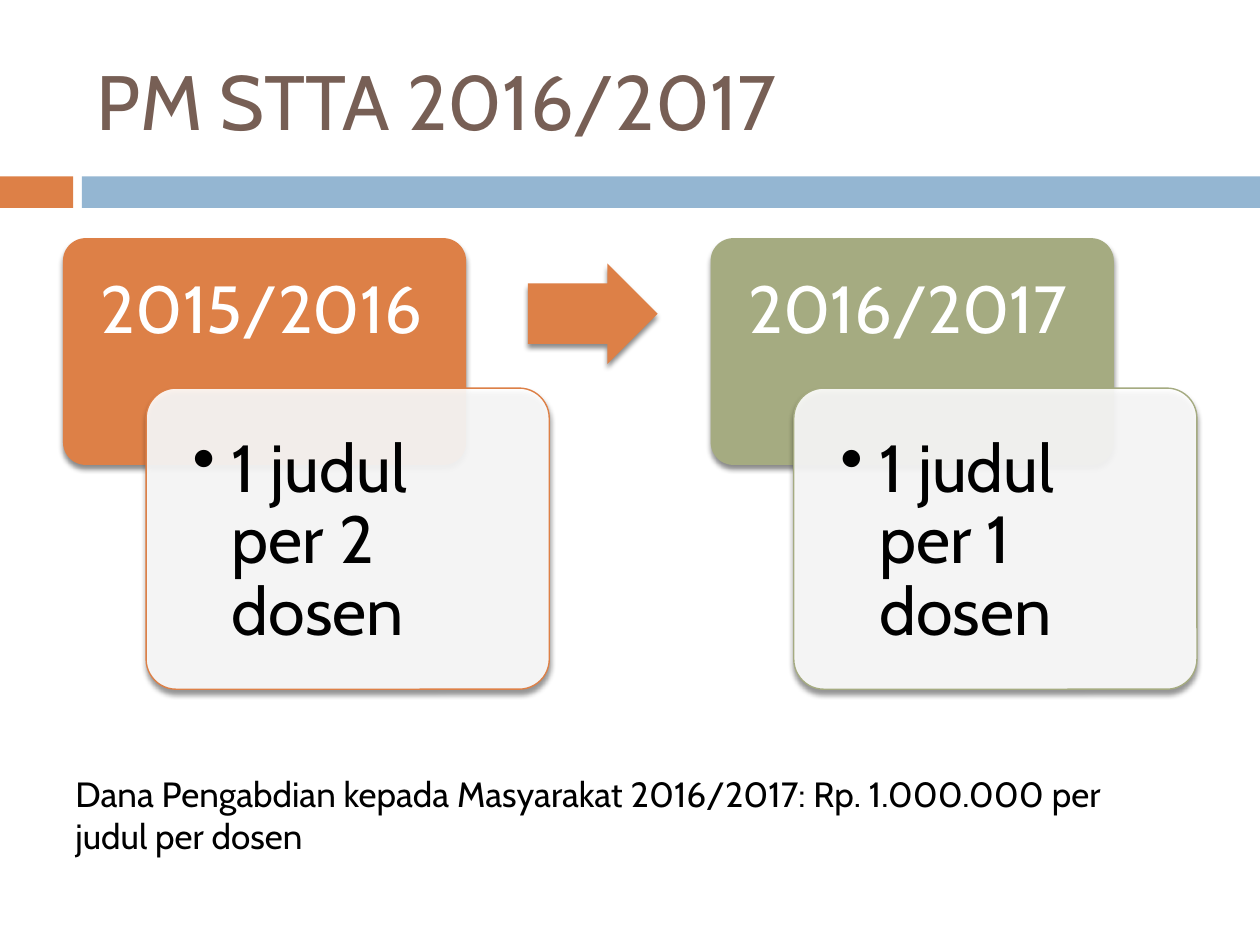
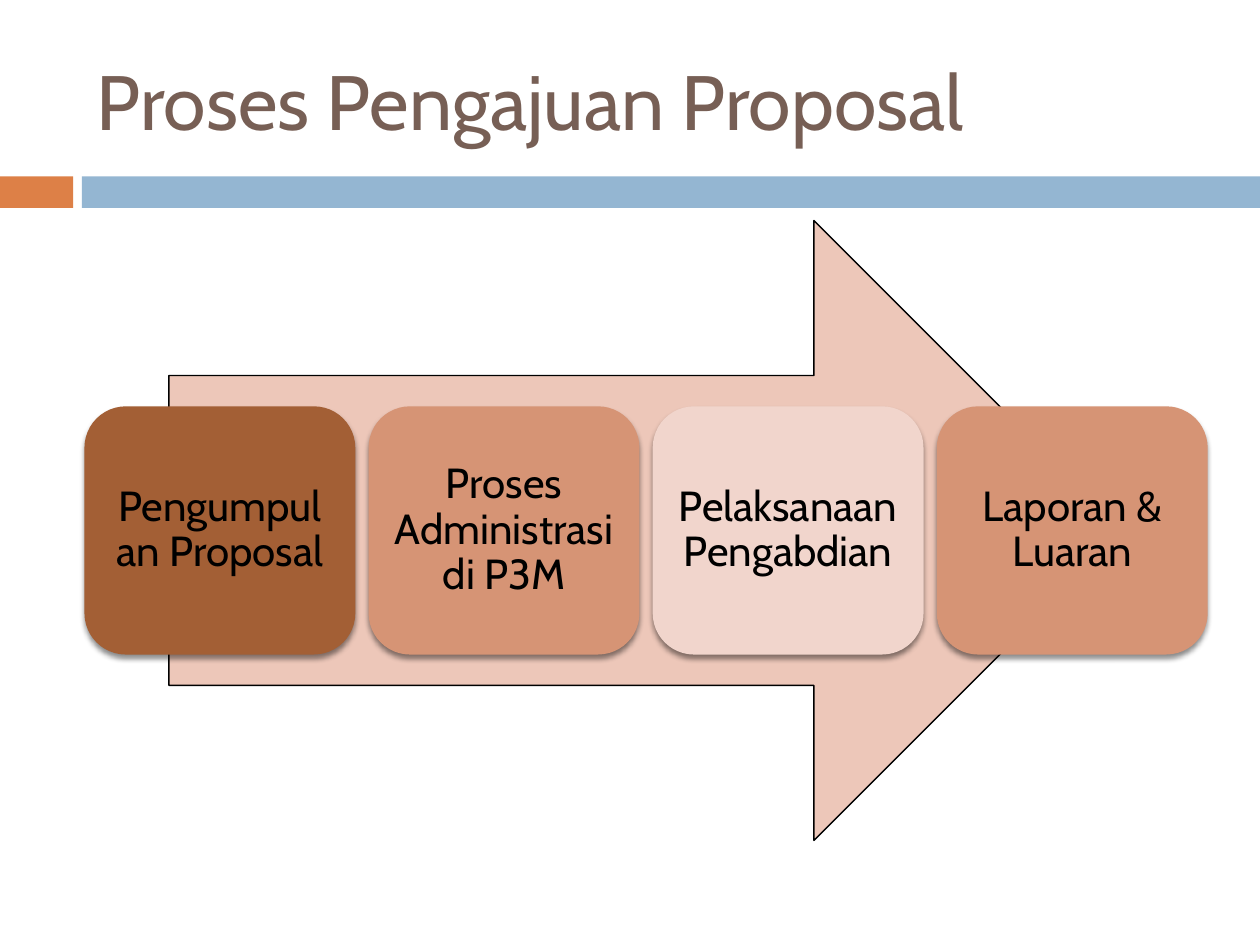
from dataclasses import dataclass

from lxml.etree import SubElement
from pptx import Presentation
from pptx.dml.color import RGBColor
from pptx.enum.shapes import MSO_SHAPE as Preset
from pptx.enum.text import MSO_ANCHOR as Anchor, PP_ALIGN as Align
from pptx.oxml.ns import qn
from pptx.util import Inches, Pt


@dataclass(frozen=True)
class Theme:
    """Colours, font and type sizes of the deck."""

    font: str = "Cabin"
    title: str = "775F55"
    orange: str = "DD8047"
    blue: str = "94B6D2"
    green: str = "A5AB81"
    white: str = "FFFFFF"
    black: str = "000000"
    flow: str = "EDC7B9"
    steps: tuple = ("A35F35", "D69475", "F1D5CC", "D69475")
    title_size: int = 44
    card_size: int = 38
    step_size: int = 24
    note_size: int = 20
    outline: float = 0.79


class SlideBuilder:
    """Draws styled elements on a grid of 100 columns by 75 rows."""

    columns, rows = 100, 75

    def __init__(self, deck, theme):
        """Keep the deck and its theme."""
        self.deck, self.theme, self.page = deck, theme, None

    def place(self, left, top, width, height):
        """Turn grid units into slide lengths."""
        column = self.deck.slide_width / self.columns
        row = self.deck.slide_height / self.rows
        return int(left * column), int(top * row), int(width * column), int(height * row)

    def start(self, title):
        """Add a page with its bands and title."""
        self.page = self.deck.slides.add_slide(self.deck.slide_layouts[6])
        for left, width, colour in ((0, 5.8, self.theme.orange), (6.5, 93.5, self.theme.blue)):
            self.shape(Preset.RECTANGLE, (left, 14, width, 2.5), colour)
        self.text((6.7, 2.5, 89.2, 10.8), title, self.theme.title_size, self.theme.title,
                  anchor=Anchor.MIDDLE)

    def shape(self, preset, area, fill, line=None, adjust=(), shadow=False, opacity=None):
        """Add a filled preset shape."""
        shape = self.page.shapes.add_shape(preset, *self.place(*area))
        for index, value in enumerate(adjust):
            shape.adjustments[index] = value
        shape.fill.solid()
        shape.fill.fore_color.rgb = RGBColor.from_string(fill)
        if opacity:
            colour = shape.fill._xPr.find(qn("a:solidFill"))[0]
            SubElement(colour, qn("a:alpha"), val=str(opacity * 1000))
        if line:
            shape.line.color.rgb = RGBColor.from_string(line)
            shape.line.width = Pt(self.theme.outline)
        else:
            shape.line.fill.background()
        shape.shadow.inherit = False
        if shadow:
            self.cast_shadow(shape)

    def cast_shadow(self, shape):
        """Give a shape the soft shadow below it."""
        effects = shape._element.spPr.find(qn("a:effectLst"))
        outer = SubElement(effects, qn("a:outerShdw"), blurRad=str(Pt(3)), dist=str(Pt(2.4)),
                           dir="5400000", rotWithShape="0")
        colour = SubElement(outer, qn("a:srgbClr"), val=self.theme.black)
        SubElement(colour, qn("a:alpha"), val="45000")

    def text(self, area, words, size, colour, insets=(0.1, 0.05, 0.1, 0.05),
             anchor=Anchor.TOP, align=Align.LEFT, spacing=1.0, bullet=False):
        """Add a wrapped text box."""
        frame = self.page.shapes.add_textbox(*self.place(*area)).text_frame
        frame.word_wrap = True
        frame.vertical_anchor = anchor
        (frame.margin_left, frame.margin_top,
         frame.margin_right, frame.margin_bottom) = map(Inches, insets)
        para = frame.paragraphs[0]
        para.text = words
        para.alignment = align
        para.line_spacing = spacing
        para.font.name = self.theme.font
        para.font.size = Pt(size)
        para.font.color.rgb = RGBColor.from_string(colour)
        if bullet:
            self.add_bullet(para)

    def add_bullet(self, para):
        """Hang a round bullet before a paragraph."""
        settings = para._p.get_or_add_pPr()
        settings.set("marL", str(Inches(0.31)))
        settings.set("indent", str(-Inches(0.31)))
        mark = settings.makeelement(qn("a:buChar"), {"char": "•"})
        settings.find(qn("a:defRPr")).addprevious(mark)

    def year_card(self, left, year, quota, colour):
        """Add a year heading with its quota card overlapping it."""
        theme, top, width = self.theme, 18.9, 32
        self.shape(Preset.ROUNDED_RECTANGLE, (left, top, width, 18), colour,
                   adjust=(0.1,), shadow=True)
        self.text((left, top, width, 12), year, theme.card_size, theme.white,
                  insets=(0.3, 0.3, 0.3, 0.16), spacing=0.9)
        left, top, pad = left + 6.6, top + 11.9, 0.7
        self.shape(Preset.ROUNDED_RECTANGLE, (left, top, width, 23.9), theme.white,
                   line=colour, adjust=(0.1,), shadow=True, opacity=90)
        self.text((left + pad, top + pad, width - 2 * pad, 23.9 - 2 * pad), quota,
                  theme.card_size, theme.black, insets=(0.3,) * 4, spacing=0.9, bullet=True)

    def step(self, left, label, colour):
        """Add one step of the process."""
        top, width, height, pad = 32.25, 21.5, 19.7, 0.97
        self.shape(Preset.ROUNDED_RECTANGLE, (left, top, width, height), colour, shadow=True)
        self.text((left + pad, top + pad, width - 2 * pad, height - 2 * pad), label,
                  self.theme.step_size, self.theme.black, insets=(0.1,) * 4,
                  anchor=Anchor.MIDDLE, align=Align.CENTER, spacing=0.9)


def build_quota_page(builder):
    """Compare the quotas of two years."""
    theme = builder.theme
    builder.start("PM STTA 2016/2017")
    builder.year_card(5, "2015/2016", "1 judul per 2 dosen", theme.orange)
    builder.shape(Preset.RIGHT_ARROW, (41.9, 20.9, 10.3, 8), theme.orange,
                  adjust=(0.6, 0.5), shadow=True)
    builder.year_card(56.4, "2016/2017", "1 judul per 1 dosen", theme.green)
    builder.text((5, 60.8, 89.2, 7.7),
                 "Dana Pengabdian kepada Masyarakat 2016/2017: Rp. 1.000.000 per judul per dosen",
                 theme.note_size, theme.black)


def build_process_page(builder):
    """Show the proposal steps along an arrow."""
    theme = builder.theme
    builder.start("Proses Pengajuan Proposal")
    builder.shape(Preset.RIGHT_ARROW, (13.4, 17.5, 75.8, 49.2), theme.flow, line=theme.black)
    labels = ("Pengumpulan Proposal", "Proses Administrasi di P3M",
              "Pelaksanaan Pengabdian", "Laporan & Luaran")
    for index, (label, colour) in enumerate(zip(labels, theme.steps)):
        builder.step(6.7 + index * 22.55, label, colour)


def main():
    """Build and save the deck."""
    deck = Presentation()
    deck.slide_width, deck.slide_height = Inches(10), Inches(7.5)
    builder = SlideBuilder(deck, Theme())
    build_quota_page(builder)
    build_process_page(builder)
    deck.save("out.pptx")


if __name__ == "__main__":
    main()
